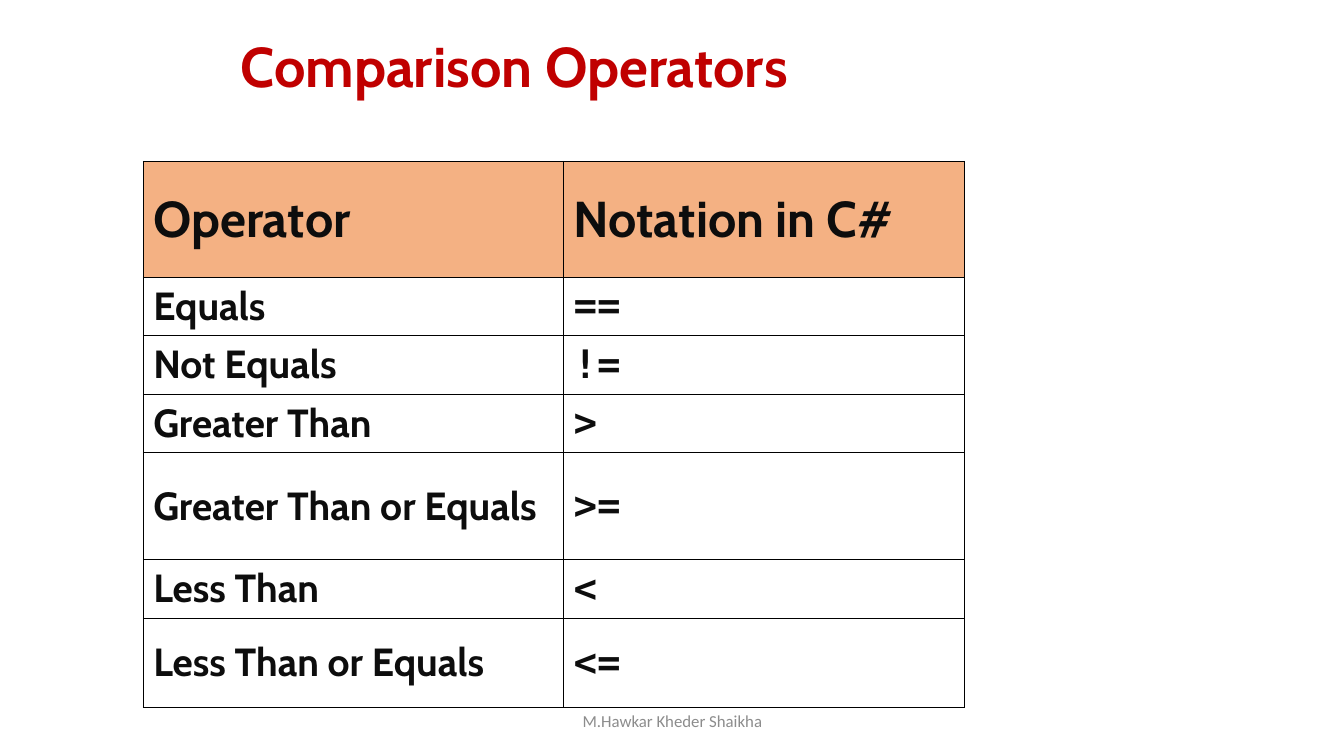
from lxml.etree import SubElement
from pptx import Presentation
from pptx.dml.color import RGBColor
from pptx.enum.text import MSO_ANCHOR, PP_ALIGN
from pptx.oxml.ns import qn
from pptx.util import Inches, Pt

COLORS = {"title": "C00000", "ink": "0D0D0D", "header": "F4B183",
          "border": "000000", "footer": "8C8C8C"}
HEADINGS = ("Operator", "Notation in C#")
OPERATORS = [
    ("Equals", "=="),
    ("Not Equals", "!="),
    ("Greater Than", ">"),
    ("Greater Than or Equals", ">="),
    ("Less Than", "<"),
    ("Less Than or Equals", "<="),
]
COLUMN_WIDTHS = (4.17, 3.97)
ROW_HEIGHTS = (1.15, 0.58, 0.58, 0.58, 1.06, 0.58, 0.89)


class OperatorSlide:
    """Holds the style and the current slide, and adds its elements."""

    heading_font = "Cabin"
    code_font = "DejaVu Sans Mono"
    footer_font = "Calibri"

    def __init__(self, deck):
        self.page = deck.slides.add_slide(deck.slide_layouts[6])

    def span(self, para, text, size, font, color, bold=True):
        span = para.add_run()
        span.text = text
        span.font.size = Pt(size)
        span.font.name = font
        span.font.bold = bold
        span.font.color.rgb = RGBColor.from_string(COLORS[color])

    def text(self, position, text, size, font, color, bold=True,
             align=PP_ALIGN.LEFT, anchor=MSO_ANCHOR.TOP):
        box = self.page.shapes.add_textbox(*map(Inches, position))
        frame = box.text_frame
        frame.word_wrap = True
        frame.vertical_anchor = anchor
        para = frame.paragraphs[0]
        para.alignment = align
        self.span(para, text, size, font, color, bold)

    def borders(self, cell):
        properties = cell._tc.get_or_add_tcPr()
        for side in ("lnL", "lnR", "lnT", "lnB"):
            line = SubElement(properties, qn(f"a:{side}"), w=str(Pt(0.5)))
            fill = SubElement(line, qn("a:solidFill"))
            SubElement(fill, qn("a:srgbClr"), val=COLORS["border"])

    def cell(self, cell, text, size, font, fill=None):
        cell.vertical_anchor = MSO_ANCHOR.MIDDLE
        self.borders(cell)
        if fill:
            cell.fill.solid()
            cell.fill.fore_color.rgb = RGBColor.from_string(COLORS[fill])
        else:
            cell.fill.background()
        self.span(cell.text_frame.paragraphs[0], text, size, font, "ink")

    def table(self, left, top):
        table = self.page.shapes.add_table(
            len(ROW_HEIGHTS), len(COLUMN_WIDTHS), Inches(left), Inches(top),
            Inches(sum(COLUMN_WIDTHS)), Inches(sum(ROW_HEIGHTS))).table
        table.horz_banding = False
        for column, width in zip(table.columns, COLUMN_WIDTHS):
            column.width = Inches(width)
        for row, height in zip(table.rows, ROW_HEIGHTS):
            row.height = Inches(height)
        for index, heading in enumerate(HEADINGS):
            self.cell(table.cell(0, index), heading, 36, self.heading_font, "header")
        for index, (name, notation) in enumerate(OPERATORS, start=1):
            self.cell(table.cell(index, 0), name, 28, self.heading_font)
            self.cell(table.cell(index, 1), notation, 28, self.code_font)


def main():
    deck = Presentation()
    deck.slide_width = Inches(13.33)
    deck.slide_height = Inches(7.5)
    slide = OperatorSlide(deck)
    slide.text((2.29, 0.26, 6.67, 1.08), "Comparison Operators", 40,
               slide.heading_font, "title")
    slide.table(1.42, 1.6)
    slide.text((4.42, 6.95, 4.5, 0.4), "M.Hawkar Kheder Shaikha", 12,
               slide.footer_font, "footer", bold=False,
               align=PP_ALIGN.CENTER, anchor=MSO_ANCHOR.MIDDLE)
    deck.save("out.pptx")


if __name__ == "__main__":
    main()
